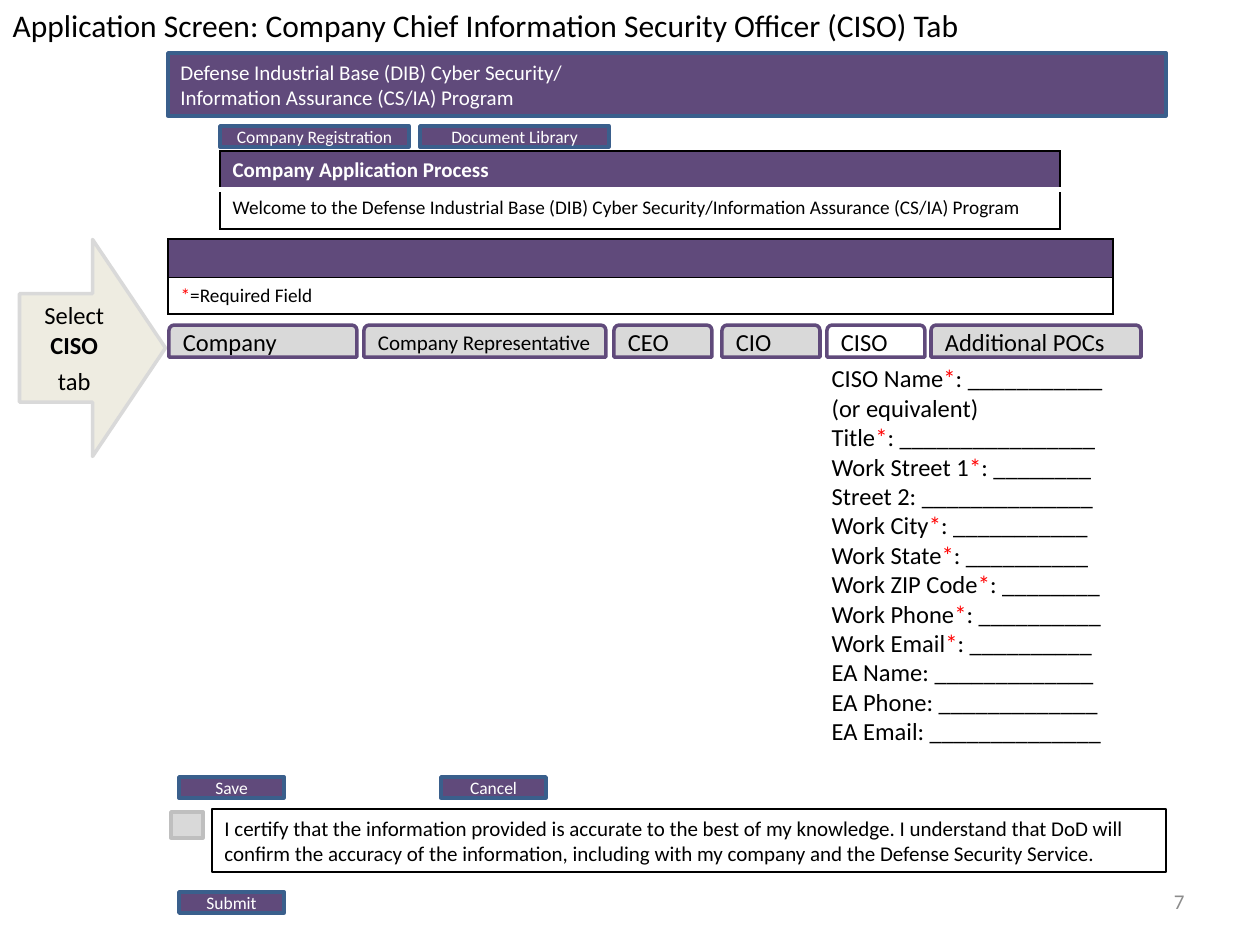
from pptx import Presentation
from pptx import util as u
from pptx.dml import color
from pptx.enum import shapes, text
from pptx.oxml import ns
from lxml import etree

HUES = {
    "plum": "604A7B", "blue": "3A5F8C", "black": "000000", "white": "FFFFFF",
    "red": "FF0000", "grey": "D9D9D9", "mid": "BFBFBF", "cream": "EEECE1",
    "dim": "8C8C8C",
}
KIND = shapes.MSO_SHAPE
MID = text.MSO_ANCHOR.MIDDLE
LEFT, CENTER, RIGHT = (
    text.PP_ALIGN.LEFT, text.PP_ALIGN.CENTER, text.PP_ALIGN.RIGHT)


class Page:
    font = "Calibri"
    scale = 914400 / 126

    def __init__(self):
        self.deck = Presentation()
        self.deck.slide_width = self.px(1260)
        self.deck.slide_height = self.px(945)
        self.slide = self.deck.slides.add_slide(self.deck.slide_layouts[1])

    def px(self, size):
        return u.Emu(round(size * self.scale))

    def place(self, item, box):
        item.left, item.top, item.width, item.height = map(self.px, box)

    def rgb(self, hue):
        return color.RGBColor.from_string(HUES[hue])

    def words(self, frame, lines, size, hue="black", align=LEFT, bold=False):
        for i, line in enumerate(lines):
            para = frame.paragraphs[0] if i == 0 else frame.add_paragraph()
            para.alignment = align
            para.space_before = u.Pt(0)
            para.font.name = self.font
            para.font.size = u.Pt(size)
            para.font.bold = bold
            para.font.color.rgb = self.rgb(hue)
            head, star, tail = line.partition("*")
            for part in filter(None, (head, star, tail)):
                run = para.add_run()
                run.text = part
                if part == "*":
                    run.font.color.rgb = self.rgb("red")

    def holder(self, item, box, lines, size):
        self.place(item, box)
        frame = item.text_frame
        frame.auto_size = text.MSO_AUTO_SIZE.NONE
        frame.word_wrap = False
        frame.vertical_anchor = text.MSO_ANCHOR.TOP
        self.words(frame, lines, size)
        for para in frame.paragraphs:
            props = para._p.get_or_add_pPr()
            props.set("marL", "0")
            props.set("indent", "0")
            bullet = etree.Element(ns.qn("a:buNone"))
            props.find(ns.qn("a:defRPr")).addprevious(bullet)

    def title(self, box, line, size):
        self.holder(self.slide.shapes.title, box, [line], size)

    def body(self, box, lines, size):
        self.holder(self.slide.placeholders[1], box, lines, size)

    def shape(self, box, fill, edge, lines=(), size=12, hue="black",
              align=LEFT, kind=KIND.RECTANGLE, width=2, anchor=MID):
        item = self.slide.shapes.add_shape(kind, *map(self.px, box))
        item.shadow.inherit = False
        if fill:
            item.fill.solid()
            item.fill.fore_color.rgb = self.rgb(fill)
        else:
            item.fill.background()
        item.line.color.rgb = self.rgb(edge)
        item.line.width = u.Pt(width)
        frame = item.text_frame
        frame.word_wrap = True
        frame.vertical_anchor = anchor
        self.words(frame, lines, size, hue, align)
        return item

    def button(self, x, y, width, label):
        self.shape((x, y, width, 21), "plum", "blue", [label], 10,
                   "white", CENTER)

    def tab(self, x, width, label, size=14, fill="grey"):
        self.shape((x, 325, width, 32), fill, "plum", [label], size,
                   kind=KIND.ROUND_2_SAME_RECTANGLE)

    def arrow(self, box):
        item = self.shape(box, "cream", "grey", ["Select ", "tab"], 14,
                          align=CENTER, kind=KIND.UP_ARROW)
        item.rotation = 90
        frame = item.text_frame
        frame._txBody.bodyPr.set("vert", "vert270")
        run = frame.paragraphs[0].add_run()
        run.text = "CISO"
        run.font.bold = True
        frame.paragraphs[1].space_before = u.Pt(4)

    def label(self, box, line, size, hue, align):
        frame = self.slide.shapes.add_textbox(*map(self.px, box)).text_frame
        frame.word_wrap = True
        frame.vertical_anchor = MID
        self.words(frame, [line], size, hue, align)

    def border(self, cell, sides):
        props = cell._tc.get_or_add_tcPr()
        for i, side in enumerate("LRTB"):
            hue, width = sides.get(side, ("black", 1))
            edge = etree.Element(ns.qn("a:ln" + side), w=str(u.Pt(width)))
            fill = etree.SubElement(edge, ns.qn("a:solidFill"))
            etree.SubElement(fill, ns.qn("a:srgbClr"), val=HUES[hue])
            props.insert(i, edge)

    def table(self, box, heights, rows):
        grid = self.slide.shapes.add_table(
            len(rows), 1, *map(self.px, box)).table
        for i, (line, size, hue, fill, sides, anchor) in enumerate(rows):
            grid.rows[i].height = self.px(heights[i])
            cell = grid.cell(i, 0)
            cell.fill.solid()
            cell.fill.fore_color.rgb = self.rgb(fill)
            cell.vertical_anchor = anchor
            if line:
                self.words(cell.text_frame, [line], size, hue,
                           bold=hue == "white")
            else:
                cell.margin_top = cell.margin_bottom = 0
            self.border(cell, sides)


def main():
    top, low = text.MSO_ANCHOR.TOP, text.MSO_ANCHOR.BOTTOM
    page = Page()
    page.title((0, 0, 984, 50), "Application Screen: Company Chief "
               "Information Security Officer (CISO) Tab", 18)
    page.shape((168, 53, 998, 63), "plum", "blue",
               ["Defense Industrial Base (DIB) Cyber Security/",
                "Information Assurance (CS/IA) Program"], 12, "white")

    for x, name in ((220, "Company Registration"), (420, "Document Library")):
        page.button(x, 126, 189, name)
    for x, y, name in ((179, 777, "Save"), (441, 777, "Cancel"),
                       (179, 892, "Submit")):
        page.button(x, y, 105, name)

    page.table((220, 151, 840, 78), (38, 40), [
        ("Company Application Process", 12, "white", "plum",
         {"B": ("white", 3)}, top),
        ("Welcome to the Defense Industrial Base (DIB) Cyber Security/"
         "Information Assurance (CS/IA) Program", 11, "black", "white",
         {"T": ("white", 3)}, top),
    ])
    page.table((168, 239, 945, 74), (38, 36), [
        ("", 12, "black", "plum", {}, top),
        ("*=Required Field", 11, "black", "white", {}, low),
    ])

    page.shape((212, 809, 954, 63), None, "black", [
        "I certify that the information provided is accurate to the best of "
        "my knowledge. I understand that DoD will confirm the accuracy of "
        "the information, including with my company and the Defense "
        "Security Service."], width=0.75, anchor=top)
    page.shape((171, 812, 32, 26), "grey", "mid")

    page.tab(169, 188, "Company")
    page.tab(364, 242, "Company Representative", 12)
    page.tab(614, 98, "CEO")
    page.tab(722, 98, "CIO")
    page.tab(827, 98, "CISO", fill=None)
    page.tab(931, 210, "Additional POCs")
    page.arrow((-16, 275, 217, 146))

    blanks = (
        ("CISO Name*", 11), ("(or equivalent)", 0), ("Title*", 16),
        ("Work Street 1*", 8), ("Street 2", 14), ("Work City*", 11),
        ("Work State*", 10), ("Work ZIP Code*", 8), ("Work Phone*", 10),
        ("Work Email*", 10), ("EA Name", 13), ("EA Phone", 13),
        ("EA Email", 14),
    )
    page.body((819, 357, 297, 437),
              [f"{name}: {'_' * size}" if size else name
               for name, size in blanks], 14)
    page.label((903, 876, 294, 50), "7", 12, "dim", RIGHT)
    page.deck.save("out.pptx")


if __name__ == "__main__":
    main()
